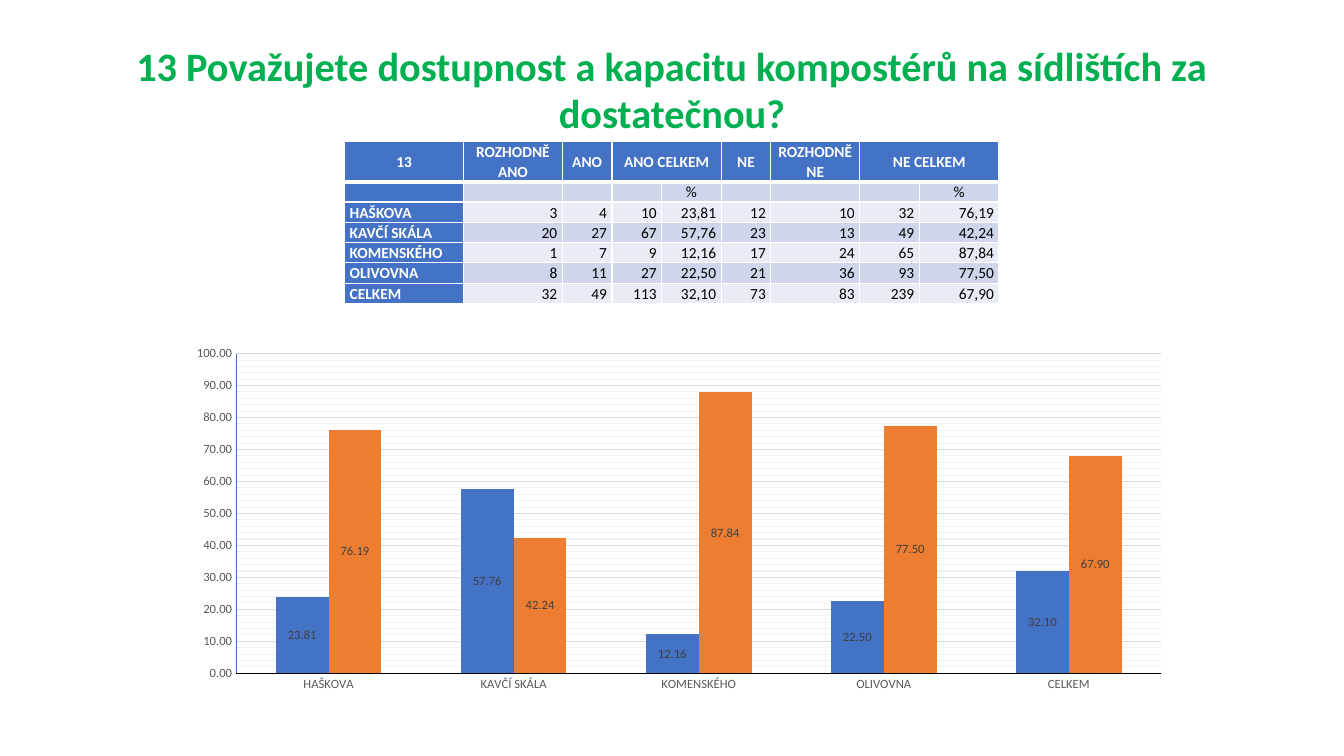
"""Build the survey slide on compost bin availability, with its answer table and column chart."""
from dataclasses import dataclass

from lxml.etree import SubElement, fromstring
from pptx import Presentation
from pptx.chart.data import CategoryChartData
from pptx.dml.color import RGBColor
from pptx.enum.chart import XL_CHART_TYPE, XL_LABEL_POSITION, XL_TICK_MARK
from pptx.enum.text import MSO_ANCHOR, PP_ALIGN
from pptx.oxml.ns import qn
from pptx.util import Pt


@dataclass(frozen=True)
class Theme:
    font: str = "Calibri"
    title_green: str = "00B050"
    blue: str = "4472C4"
    orange: str = "ED7D31"
    band_dark: str = "CFD5EA"
    band_light: str = "E9EBF5"
    white: str = "FFFFFF"
    black: str = "000000"
    axis_text: str = "595959"
    label_text: str = "404040"
    major_grid: str = "D9D9D9"
    minor_grid: str = "F2F2F2"
    title_size: float = 28.8
    table_size: int = 11
    chart_size: int = 9


theme = Theme()


def apply_format(target, values):
    for name, value in values.items():
        setattr(target, name, value)


def style_font(font, size, color, bold=False):
    apply_format(font, {"name": theme.font, "size": Pt(size), "bold": bold})
    font.color.rgb = RGBColor.from_string(color)


presentation = Presentation()
apply_format(presentation, {"slide_width": Pt(960), "slide_height": Pt(540)})
slide = presentation.slides.add_slide(presentation.slide_layouts[6])

title = slide.shapes.add_textbox(Pt(66), Pt(28.8), Pt(828), Pt(72))
apply_format(title.text_frame, {"word_wrap": True, "vertical_anchor": MSO_ANCHOR.MIDDLE})
title_paragraph = title.text_frame.paragraphs[0]
apply_format(title_paragraph, {"alignment": PP_ALIGN.CENTER, "line_spacing": 0.98})
title_run = title_paragraph.add_run()
title_run.text = "13 Považujete dostupnost a kapacitu kompostérů na sídlištích za dostatečnou?"
style_font(title_run.font, theme.title_size, theme.title_green, True)

places = ["HAŠKOVA", "KAVČÍ SKÁLA", "KOMENSKÉHO", "OLIVOVNA", "CELKEM"]
yes_percent = [23.81, 57.76, 12.16, 22.5, 32.1]
no_percent = [76.19, 42.24, 87.84, 77.5, 67.9]
counts = [
    (3, 4, 10, 12, 10, 32),
    (20, 27, 67, 23, 13, 49),
    (1, 7, 9, 17, 24, 65),
    (8, 11, 27, 21, 36, 93),
    (32, 49, 113, 73, 83, 239),
]
table_rows = [
    ["13", "ROZHODNĚ ANO", "ANO", "ANO CELKEM", "", "NE", "ROZHODNĚ NE", "NE CELKEM", ""],
    ["", "", "", "", "%", "", "", "", "%"],
]
for place, count, yes, no in zip(places, counts, yes_percent, no_percent):
    yes_text, no_text = (f"{share:.2f}".replace(".", ",") for share in (yes, no))
    table_rows.append([place, *map(str, count[:3]), yes_text, *map(str, count[3:]), no_text])

column_widths = [85, 70.5, 35.5, 35.5, 42.5, 35.5, 63.5, 42.5, 57]
row_heights = [29] + [14.5] * 6
table = slide.shapes.add_table(
    len(row_heights), len(column_widths), Pt(246.2), Pt(100.8),
    Pt(sum(column_widths)), Pt(sum(row_heights)),
).table
for column, width in zip(table.columns, column_widths):
    column.width = Pt(width)
for row, height in zip(table.rows, row_heights):
    row.height = Pt(height)

cell_format = {
    "margin_left": Pt(3.6), "margin_right": Pt(3.6), "margin_top": 0, "margin_bottom": 0,
}
for row_index, texts in enumerate(table_rows):
    for column_index, text in enumerate(texts):
        cell = table.cell(row_index, column_index)
        is_heading = row_index == 0 or column_index == 0
        band = theme.band_dark if row_index % 2 else theme.band_light
        apply_format(cell, cell_format)
        cell.vertical_anchor = MSO_ANCHOR.MIDDLE if row_index < 2 else MSO_ANCHOR.BOTTOM
        cell.fill.solid()
        cell.fill.fore_color.rgb = RGBColor.from_string(theme.blue if is_heading else band)

        paragraph = cell.text_frame.paragraphs[0]
        if row_index < 2:
            alignment = PP_ALIGN.CENTER
        else:
            alignment = PP_ALIGN.RIGHT if column_index else PP_ALIGN.LEFT
        apply_format(paragraph, {
            "alignment": alignment, "line_spacing": 1.07, "space_after": Pt(8),
        })
        if text:
            run = paragraph.add_run()
            run.text = text
            style_font(run.font, theme.table_size,
                       theme.white if is_heading else theme.black, is_heading)
        else:
            SubElement(paragraph._p, qn("a:endParaRPr"), sz=str(theme.table_size * 100))

        border_widths = {
            "lnL": 1, "lnR": 1,
            "lnT": 3 if row_index == 1 else 1,
            "lnB": 3 if row_index == 0 else 1,
        }
        cell_properties = cell._tc.get_or_add_tcPr()
        for position, (side, width) in enumerate(border_widths.items()):
            border = fromstring(
                f'<a:{side} xmlns:a="http://schemas.openxmlformats.org/drawingml/2006/main" '
                f'w="{Pt(width)}"><a:solidFill><a:srgbClr val="{theme.white}"/></a:solidFill>'
                f'</a:{side}>'
            )
            cell_properties.insert(position, border)
for first_column in (3, 7):
    table.cell(0, first_column).merge(table.cell(0, first_column + 1))

chart_data = CategoryChartData(number_format="0.00")
chart_data.categories = places
chart_data.add_series("Series 1", yes_percent)
chart_data.add_series("Series 2", no_percent)
chart = slide.shapes.add_chart(
    XL_CHART_TYPE.COLUMN_CLUSTERED, Pt(86.4), Pt(233.3), Pt(838.8), Pt(288.7), chart_data
).chart
apply_format(chart, {"has_legend": False, "has_title": False})
style_font(chart.font, 10, theme.black)

plot = chart.plots[0]
apply_format(plot, {"gap_width": 150, "overlap": 0, "vary_by_categories": False})
for series, color in zip(plot.series, (theme.blue, theme.orange)):
    series.format.fill.solid()
    series.format.fill.fore_color.rgb = RGBColor.from_string(color)
    labels = series.data_labels
    apply_format(labels, {
        "show_value": True, "position": XL_LABEL_POSITION.CENTER,
        "number_format": "0.00", "number_format_is_linked": False,
    })
    style_font(labels.font, theme.chart_size, theme.label_text)

value_axis = chart.value_axis
apply_format(value_axis, {
    "minimum_scale": 0, "maximum_scale": 100, "major_unit": 10, "minor_unit": 2,
    "has_major_gridlines": True, "has_minor_gridlines": True,
})
apply_format(value_axis.tick_labels, {"number_format": "0.00", "number_format_is_linked": False})
for axis in (chart.category_axis, value_axis):
    apply_format(axis, {
        "major_tick_mark": XL_TICK_MARK.NONE, "minor_tick_mark": XL_TICK_MARK.NONE,
    })
    style_font(axis.tick_labels.font, theme.chart_size, theme.axis_text)
for line, color in (
    (chart.category_axis.format.line, theme.black),
    (value_axis.format.line, theme.blue),
    (value_axis.major_gridlines.format.line, theme.major_grid),
):
    line.width = Pt(0.75)
    line.color.rgb = RGBColor.from_string(color)

plot_area = chart._chartSpace.chart.plotArea
minor_gridlines = plot_area.find(f"{qn('c:valAx')}/{qn('c:minorGridlines')}")
minor_properties = SubElement(minor_gridlines, qn("c:spPr"))
minor_line = SubElement(minor_properties, qn("a:ln"), w=str(Pt(0.75)))
minor_fill = SubElement(minor_line, qn("a:solidFill"))
SubElement(minor_fill, qn("a:srgbClr"), val=theme.minor_grid)

for automatic_layout in plot_area.findall(qn("c:layout")):
    plot_area.remove(automatic_layout)
plot_area.insert(0, fromstring(
    '<c:layout xmlns:c="http://schemas.openxmlformats.org/drawingml/2006/chart">'
    '<c:manualLayout><c:layoutTarget val="inner"/><c:xMode val="edge"/><c:yMode val="edge"/>'
    '<c:x val="0.098"/><c:y val="0.067"/><c:w val="0.788"/><c:h val="0.791"/>'
    '</c:manualLayout></c:layout>'
))

presentation.save("out.pptx")
